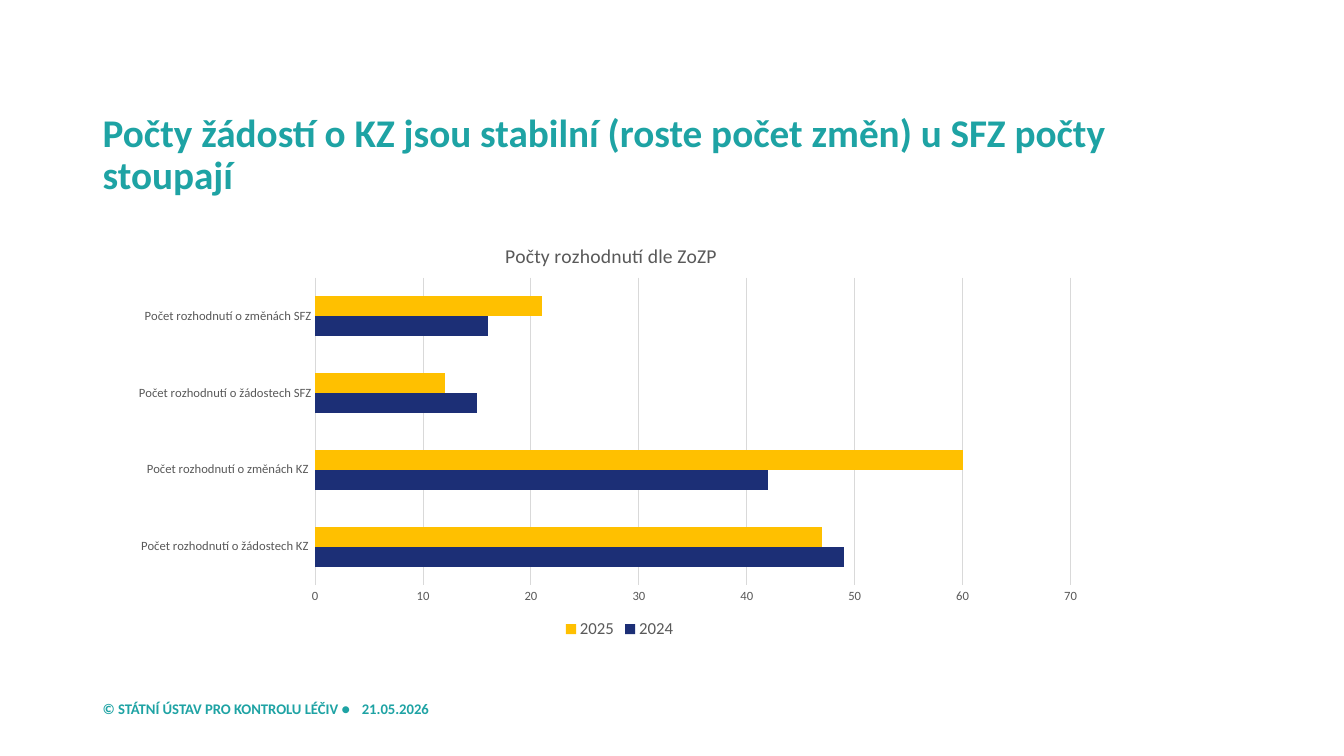
from dataclasses import dataclass

import pptx
import pptx.chart.data
import pptx.dml.color
import pptx.enum.chart
import pptx.enum.text
import pptx.oxml
import pptx.oxml.ns
import pptx.util

EMU_PER_PX = 9144
ANCHOR = pptx.enum.text.MSO_ANCHOR
TICK = pptx.enum.chart.XL_TICK_MARK


@dataclass(frozen=True)
class Theme:
    font: str = "Calibri"
    teal: str = "1EA3A4"
    navy: str = "1C2F76"
    amber: str = "FFC000"
    grey: str = "595959"
    rule: str = "D9D9D9"
    heading: float = 28
    chart_title: float = 14
    legend: float = 12
    axis: float = 9
    footer: float = 10.5


def px(length):
    return pptx.util.Emu(length * EMU_PER_PX)


def rgb(colour):
    return pptx.dml.color.RGBColor.from_string(colour)


def apply_format(target, values):
    for name, value in values.items():
        setattr(target, name, value)


def place(element, index, **fractions):
    """Fix a chart part at fractions of the chart's width and height."""
    tag = pptx.oxml.ns.qn("c:layout")
    for old in element.findall(tag):
        element.remove(old)
    target = '<c:layoutTarget val="inner"/>' if "w" in fractions else ""
    modes = "".join(f'<c:{key}Mode val="edge"/>' for key in "xy")
    sizes = "".join(f'<c:{key} val="{value}"/>' for key, value in fractions.items())
    element.insert(index, pptx.oxml.parse_xml(
        f'<c:layout {pptx.oxml.ns.nsdecls("c")}><c:manualLayout>'
        f"{target}{modes}{sizes}</c:manualLayout></c:layout>"))


class SlideBuilder:
    def __init__(self, deck, theme):
        self.theme = theme
        self.page = deck.slides.add_slide(deck.slide_layouts[6])

    def style_font(self, font, size, colour, bold=False):
        apply_format(font, {"name": self.theme.font, "size": pptx.util.Pt(size),
                            "bold": bold})
        font.color.rgb = rgb(colour)

    def text(self, words, bounds, size, anchor=ANCHOR.MIDDLE, spacing=None):
        box = self.page.shapes.add_textbox(*map(px, bounds))
        apply_format(box.text_frame, {"word_wrap": True, "vertical_anchor": anchor})
        para = box.text_frame.paragraphs[0]
        para.line_spacing = spacing
        span = para.add_run()
        span.text = words
        self.style_font(span.font, size, self.theme.teal, bold=True)

    def style_line(self, line, colour):
        line.color.rgb = rgb(colour)
        line.width = pptx.util.Pt(0.75)

    def axis(self, axis):
        apply_format(axis, {"major_tick_mark": TICK.NONE, "minor_tick_mark": TICK.NONE})
        self.style_font(axis.tick_labels.font, self.theme.axis, self.theme.grey)

    def bar_chart(self, title, categories, series, bounds):
        """Add clustered bars; series holds (name, values, colour) rows."""
        theme = self.theme
        data = pptx.chart.data.CategoryChartData()
        data.categories = categories
        for name, values, _ in series:
            data.add_series(name, values)
        chart = self.page.shapes.add_chart(
            pptx.enum.chart.XL_CHART_TYPE.BAR_CLUSTERED, *map(px, bounds), data).chart
        self.style_font(chart.font, 10, theme.grey)

        plot = chart.plots[0]
        apply_format(plot, {"gap_width": 182, "overlap": 0, "vary_by_categories": False})
        for bars, (_, _, colour) in zip(plot.series, series):
            bars.format.fill.solid()
            bars.format.fill.fore_color.rgb = rgb(colour)
        place(plot._element.getparent(), 0, x=0.2, y=0.14, w=0.77, h=0.72)

        self.axis(chart.category_axis)
        self.style_line(chart.category_axis.format.line, theme.rule)
        values_axis = chart.value_axis
        self.axis(values_axis)
        apply_format(values_axis, {"minimum_scale": 0, "maximum_scale": 70,
                                   "major_unit": 10, "has_major_gridlines": True})
        values_axis.format.line.fill.background()
        self.style_line(values_axis.major_gridlines.format.line, theme.rule)

        chart.has_title = True
        frame = chart.chart_title.text_frame
        frame.text = title
        self.style_font(frame.paragraphs[0].runs[0].font, theme.chart_title, theme.grey)
        place(chart.chart_title._element, 1, x=0.39, y=0.05)

        chart.has_legend = True
        apply_format(chart.legend, {
            "position": pptx.enum.chart.XL_LEGEND_POSITION.BOTTOM,
            "include_in_layout": False})
        self.style_font(chart.legend.font, theme.legend, theme.grey)
        place(chart.legend._element, 1, x=0.45, y=0.93)


def main():
    deck = pptx.Presentation()
    apply_format(deck, {"slide_width": px(1333), "slide_height": px(750)})
    theme = Theme()
    slide = SlideBuilder(deck, theme)
    slide.text("© STÁTNÍ ÚSTAV PRO KONTROLU LÉČIV ●", (92, 689, 276, 28),
               theme.footer, ANCHOR.TOP)
    slide.text("Počty žádostí o KZ jsou stabilní (roste počet změn) u SFZ počty stoupají",
               (92, 124, 1150, 61), theme.heading, spacing=0.9)
    slide.text("21.05.2026", (349, 689, 115, 28), theme.footer)
    slide.bar_chart(
        "Počty rozhodnutí dle ZoZP",
        ["Počet rozhodnutí o žádostech KZ ", "Počet rozhodnutí o změnách KZ ",
         "Počet rozhodnutí o žádostech SFZ", "Počet rozhodnutí o změnách SFZ"],
        [("2024", (49, 42, 15, 16), theme.navy),
         ("2025", (47, 60, 12, 21), theme.amber)],
        (118, 216, 973, 424))
    deck.save("out.pptx")


if __name__ == "__main__":
    main()
